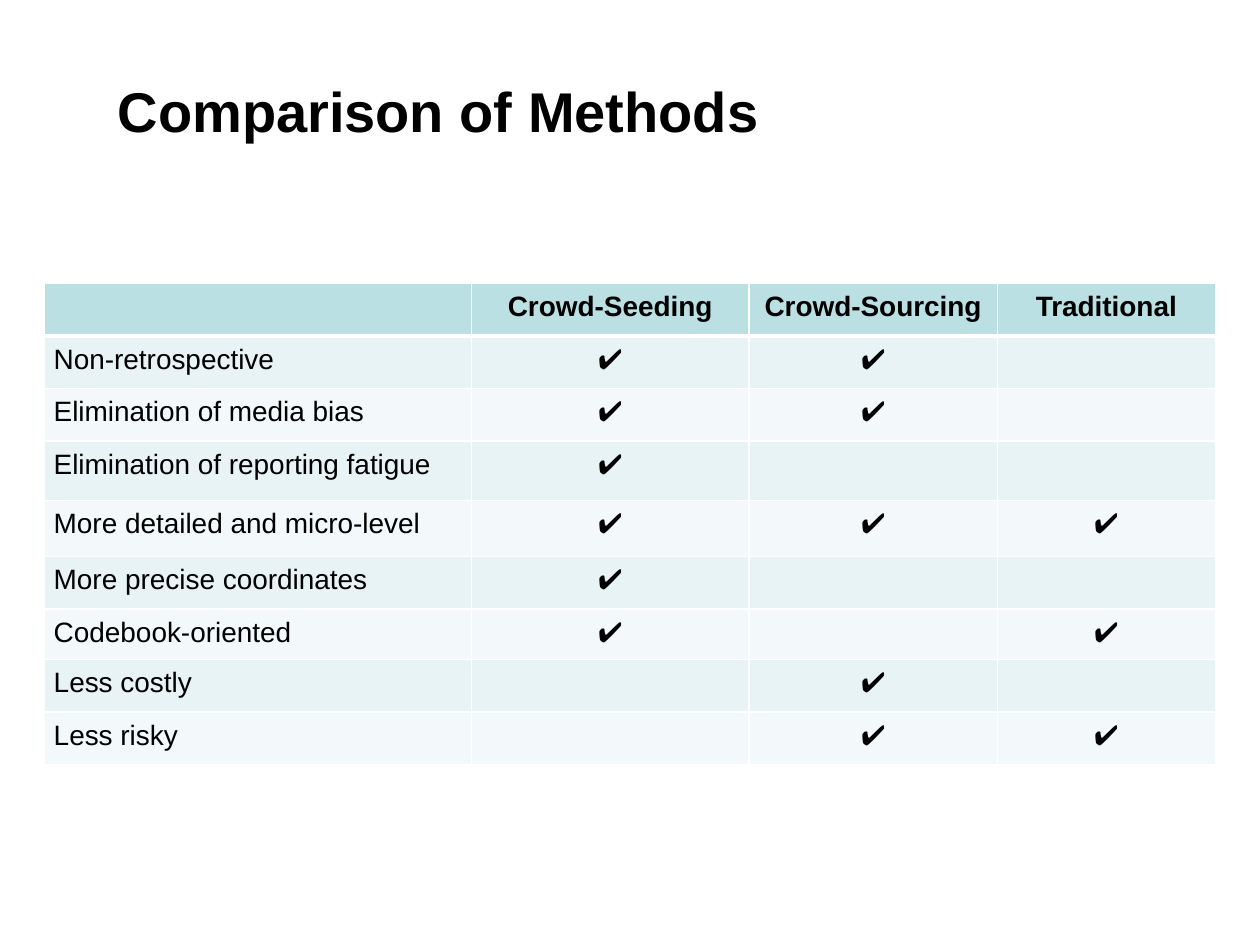
"""Build the slide that compares three data collection methods in a table."""
from lxml.etree import SubElement
from pptx import Presentation
from pptx.dml.color import RGBColor
from pptx.enum.text import MSO_ANCHOR as Anchor, PP_ALIGN as Align
from pptx.oxml.ns import qn
from pptx.util import Pt

BLACK = RGBColor(0, 0, 0)
WHITE = RGBColor(255, 255, 255)
HEADER = RGBColor(0xBB, 0xE0, 0xE3)
BANDS = [RGBColor(0xF3, 0xF9, 0xFA), RGBColor(0xE7, 0xF3, 0xF4)]

CHECK = "✔"
ROWS = [
    ("", "Crowd-Seeding", "Crowd-Sourcing", "Traditional"),
    ("Non-retrospective", CHECK, CHECK, ""),
    ("Elimination of media bias", CHECK, CHECK, ""),
    ("Elimination of reporting fatigue", CHECK, "", ""),
    ("More detailed and micro-level", CHECK, CHECK, CHECK),
    ("More precise coordinates", CHECK, "", ""),
    ("Codebook-oriented", CHECK, "", CHECK),
    ("Less costly", "", CHECK, ""),
    ("Less risky", "", CHECK, CHECK),
]
COLUMN_WIDTHS = [244, 158.5, 142, 124.5]
ROW_HEIGHTS = [30, 30, 30, 34, 32, 30, 29, 30, 30]


def format_font(font, size, bold):
    font.name = "Arial"
    font.size = Pt(size)
    font.bold = bold
    font.color.rgb = BLACK


def add_border(cell, side, width):
    line = SubElement(cell._tc.get_or_add_tcPr(), qn(f"a:ln{side}"), w=str(Pt(width)))
    fill = SubElement(line, qn("a:solidFill"))
    SubElement(fill, qn("a:srgbClr"), val=str(WHITE))


deck = Presentation()
deck.slide_width, deck.slide_height = Pt(720), Pt(540)
page = deck.slides.add_slide(deck.slide_layouts[5])

title = page.shapes.title
title.left, title.top, title.width, title.height = Pt(60), Pt(37.5), Pt(618), Pt(51)
title.text_frame.text = "Comparison of Methods"
title.text_frame.vertical_anchor = Anchor.MIDDLE
para = title.text_frame.paragraphs[0]
para.alignment = Align.LEFT
format_font(para.runs[0].font, 32, True)

table = page.shapes.add_table(
    len(ROWS), len(COLUMN_WIDTHS), Pt(25.5), Pt(162),
    Pt(sum(COLUMN_WIDTHS)), Pt(sum(ROW_HEIGHTS)),
).table
for column, width in zip(table.columns, COLUMN_WIDTHS):
    column.width = Pt(width)

for row_number, texts in enumerate(ROWS):
    is_header = row_number == 0
    table.rows[row_number].height = Pt(ROW_HEIGHTS[row_number])
    for column_number, text in enumerate(texts):
        cell = table.cell(row_number, column_number)
        cell.margin_left = cell.margin_right = Pt(5.2)
        cell.margin_top = cell.margin_bottom = Pt(2.9)
        for side in "LRTB":
            thick = (is_header and side == "B") or (row_number == 1 and side == "T")
            add_border(cell, side, 3 if thick else 1)
        cell.fill.solid()
        cell.fill.fore_color.rgb = HEADER if is_header else BANDS[row_number % 2]
        if text:
            cell.text_frame.text = text
            para = cell.text_frame.paragraphs[0]
            para.alignment = Align.CENTER if column_number else Align.LEFT
            para.line_spacing = 1.1
            format_font(para.runs[0].font, 16, is_header)

deck.save("out.pptx")
